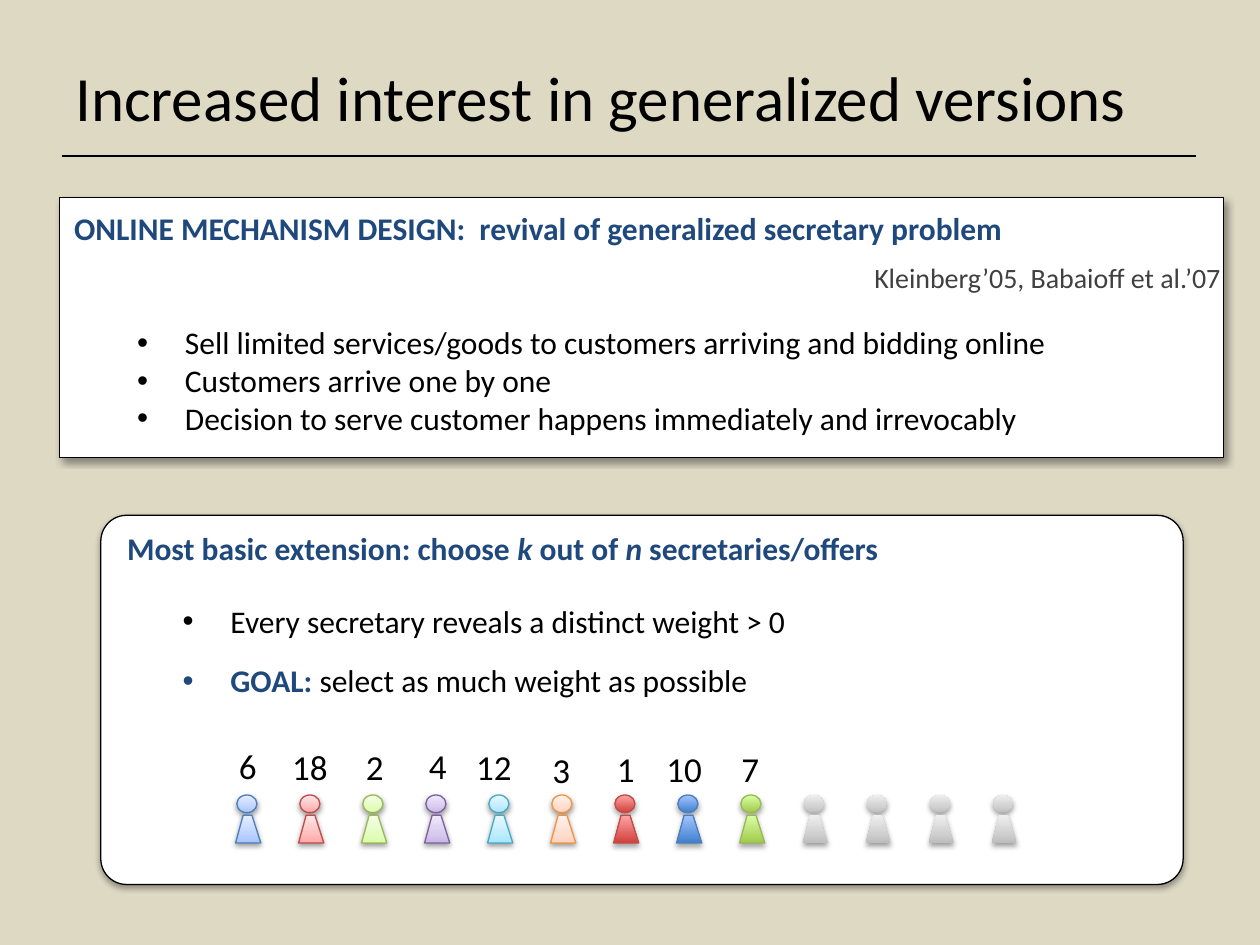
from lxml.etree import SubElement
from pptx import Presentation
from pptx.dml.color import RGBColor
from pptx.enum.shapes import MSO_CONNECTOR, MSO_SHAPE
from pptx.enum.text import MSO_ANCHOR, PP_ALIGN
from pptx.oxml.ns import qn
from pptx.util import Inches, Pt

BACKGROUND = RGBColor(0xDD, 0xD9, 0xC3)
WHITE = RGBColor(0xFF, 0xFF, 0xFF)
BLACK = RGBColor(0x00, 0x00, 0x00)
NAVY = RGBColor(0x1F, 0x49, 0x7D)
CHARCOAL = RGBColor(0x40, 0x40, 0x40)
BLUE_EDGE = RGBColor(0x4B, 0x7E, 0xBC)
RED_EDGE = RGBColor(0xBF, 0x4C, 0x48)
GREEN_EDGE = RGBColor(0x98, 0xB9, 0x55)
PURPLE_EDGE = RGBColor(0x7D, 0x60, 0xA0)
CYAN_EDGE = RGBColor(0x46, 0xAA, 0xC5)
ORANGE_EDGE = RGBColor(0xF6, 0x92, 0x40)

FONT = "Calibri"
SOFT_SHADOW = (38, 3.1, 1.6, 90)
STRONG_SHADOW = (35, 3.1, 1.8, 90)
PANEL_SHADOW = (40, 4, 3, 45)

ARRIVED = [
    (("A4C4FF", "BFD4FF", "E6EEFF"), BLUE_EDGE),
    (("FFA6A5", "FFC0BF", "FFE7E7"), RED_EDGE),
    (("DAFDA7", "E4FCC2", "F5FFE7"), GREEN_EDGE),
    (("C9B5E8", "D8CBEE", "F0EAF9"), PURPLE_EDGE),
    (("A7E6FF", "C1EDFF", "E7F8FF"), CYAN_EDGE),
    (("FFD2BD", "FFDED0", "FFF2ED"), ORANGE_EDGE),
    (("D1403C", "FFA6A5"), RED_EDGE),
    (("3F80CE", "A4C4FF"), BLUE_EDGE),
    (("A0CA4A", "DAFFA5"), GREEN_EDGE),
]
WAITING = [(("BDBDBD", "D1D1D1", "EEEEEE"), None)] * 4
WEIGHTS = [
    ("6", 1.69, 5.86), ("18", 2.22, 5.87), ("2", 2.7, 5.87),
    ("4", 3.2, 5.86), ("12", 3.68, 5.87), ("3", 4.18, 5.89),
    ("1", 4.69, 5.88), ("10", 5.19, 5.88), ("7", 5.68, 5.88),
]


def set_shadow(shape, shadow):
    opacity, blur, distance, angle = shadow
    shape.shadow.inherit = False
    effects = shape._element.spPr.find(qn("a:effectLst"))
    outer = SubElement(effects, qn("a:outerShdw"), blurRad=str(Pt(blur)),
                       dist=str(Pt(distance)), dir=str(angle * 60000),
                       rotWithShape="0")
    color = SubElement(outer, qn("a:srgbClr"), val="000000")
    SubElement(color, qn("a:alpha"), val=str(opacity * 1000))


def set_line(shape, color):
    if color is None:
        shape.line.fill.background()
    else:
        shape.line.color.rgb = color
        shape.line.width = Pt(0.75)


def set_gradient(shape, colors):
    shape.fill.gradient()
    shape.fill.gradient_angle = 90
    stops = shape._element.spPr.find(qn("a:gradFill")).find(qn("a:gsLst"))
    for stop in list(stops):
        stops.remove(stop)
    positions = (0, 35, 100) if len(colors) == 3 else (0, 100)
    for position, color in zip(positions, colors):
        stop = SubElement(stops, qn("a:gs"), pos=str(position * 1000))
        SubElement(stop, qn("a:srgbClr"), val=color)


def add_panel(slide, kind, left, top, width, height, shadow):
    panel = slide.shapes.add_shape(kind, Inches(left), Inches(top),
                                   Inches(width), Inches(height))
    panel.fill.solid()
    panel.fill.fore_color.rgb = WHITE
    set_line(panel, BLACK)
    set_shadow(panel, shadow)
    return panel


def add_person(slide, left, colors, edge):
    head = slide.shapes.add_shape(MSO_SHAPE.OVAL, Inches(left + 0.01),
                                  Inches(6.31), Inches(0.16), Inches(0.14))
    builder = slide.shapes.build_freeform(Inches(left + 0.06), Inches(6.47))
    corners = [(0.13, 6.47), (0.2, 6.69), (0, 6.69)]
    builder.add_line_segments(
        [(Inches(left + x), Inches(y)) for x, y in corners], close=True)
    shadow = SOFT_SHADOW if len(colors) == 3 else STRONG_SHADOW
    for part in (head, builder.convert_to_shape()):
        set_gradient(part, colors)
        set_line(part, edge)
        set_shadow(part, shadow)


def add_text_box(slide, left, top, width, height):
    box = slide.shapes.add_textbox(Inches(left), Inches(top),
                                   Inches(width), Inches(height))
    box.text_frame.word_wrap = True
    return box.text_frame


def write(paragraph, text, size, color=BLACK, bold=False):
    paragraph.text = text
    set_font(paragraph.font, size, color, bold)


def set_font(font, size, color=BLACK, bold=False):
    font.name = FONT
    font.size = Pt(size)
    font.color.rgb = color
    font.bold = bold


def set_bullet(paragraph, indent):
    properties = paragraph._p.get_or_add_pPr()
    properties.set("marL", str(Inches(indent)))
    properties.set("indent", str(Inches(-0.38)))
    bullet_font = properties.makeelement(qn("a:buFont"), {"typeface": "Arial"})
    bullet = properties.makeelement(qn("a:buChar"), {"char": "•"})
    default = properties.find(qn("a:defRPr"))
    if default is None:
        properties.extend([bullet_font, bullet])
    else:
        default.addprevious(bullet_font)
        default.addprevious(bullet)


def add_heading(slide):
    frame = add_text_box(slide, 0.5, 0.3, 9, 0.93)
    frame.vertical_anchor = MSO_ANCHOR.MIDDLE
    write(frame.paragraphs[0], "Increased interest in generalized versions", 36)
    rule = slide.shapes.add_connector(MSO_CONNECTOR.STRAIGHT, Inches(0.49),
                                      Inches(1.24), Inches(9.49), Inches(1.24))
    rule.line.color.rgb = BLACK
    rule.line.width = Pt(1)
    SubElement(rule._element.spPr, qn("a:effectLst"))


def add_extension(slide):
    panel = add_panel(slide, MSO_SHAPE.ROUNDED_RECTANGLE,
                      0.8, 4.09, 8.59, 2.93, STRONG_SHADOW)
    panel.adjustments[0] = 0.07

    frame = add_text_box(slide, 1.35, 4.73, 6.78, 1.59)
    reveal, goal = frame.paragraphs[0], frame.add_paragraph()
    write(reveal, "Every secretary reveals a distinct weight > 0", 18)
    for text, color, bold in [("GOAL: ", NAVY, True),
                              ("select as much weight as possible", BLACK, False)]:
        run = goal.add_run()
        run.text = text
        set_font(run.font, 18, color, bold)
    for paragraph in (reveal, goal):
        paragraph.space_before = Pt(12.2)
        set_bullet(paragraph, 0.38)

    for index, (colors, edge) in enumerate(ARRIVED + WAITING):
        add_person(slide, 1.87 + 0.5 * index, colors, edge)
    for weight, left, top in WEIGHTS:
        paragraph = add_text_box(slide, left, top, 0.55, 0.44).paragraphs[0]
        write(paragraph, weight, 20)
        paragraph.alignment = PP_ALIGN.CENTER if len(weight) == 1 else PP_ALIGN.LEFT

    title = add_text_box(slide, 0.91, 4.15, 8.95, 0.4).paragraphs[0]
    set_font(title.font, 18, NAVY, True)
    for text, italic in [("Most basic extension: choose ", False), ("k ", True),
                         ("out of ", False), ("n ", True),
                         ("secretaries/offers", False)]:
        run = title.add_run()
        run.text = text
        run.font.italic = italic


def add_mechanism_design(slide):
    add_panel(slide, MSO_SHAPE.RECTANGLE, 0.47, 1.57, 9.24, 2.06, PANEL_SHADOW)
    frame = add_text_box(slide, 0.49, 1.61, 9.44, 1.92)
    write(frame.paragraphs[0],
          "ONLINE MECHANISM DESIGN:  revival of generalized secretary problem",
          18, NAVY, True)
    for text in ("Sell limited services/goods to customers arriving and bidding online",
                 "Customers arrive one by one",
                 "Decision to serve customer happens immediately and irrevocably"):
        paragraph = frame.add_paragraph()
        paragraph.level = 1
        write(paragraph, text, 18)
        set_bullet(paragraph, 0.88)
    frame.paragraphs[1].line_spacing = 1.5
    frame.paragraphs[1].space_before = Pt(33)
    citation = add_text_box(slide, 6.84, 2.02, 3.41, 0.37).paragraphs[0]
    write(citation, "Kleinberg’05, Babaioff et al.’07", 16, CHARCOAL)


def main():
    presentation = Presentation()
    presentation.slide_width = Inches(10)
    presentation.slide_height = Inches(7.5)
    slide = presentation.slides.add_slide(presentation.slide_layouts[6])
    slide.background.fill.solid()
    slide.background.fill.fore_color.rgb = BACKGROUND
    add_heading(slide)
    add_extension(slide)
    add_mechanism_design(slide)
    presentation.save("out.pptx")


if __name__ == "__main__":
    main()
